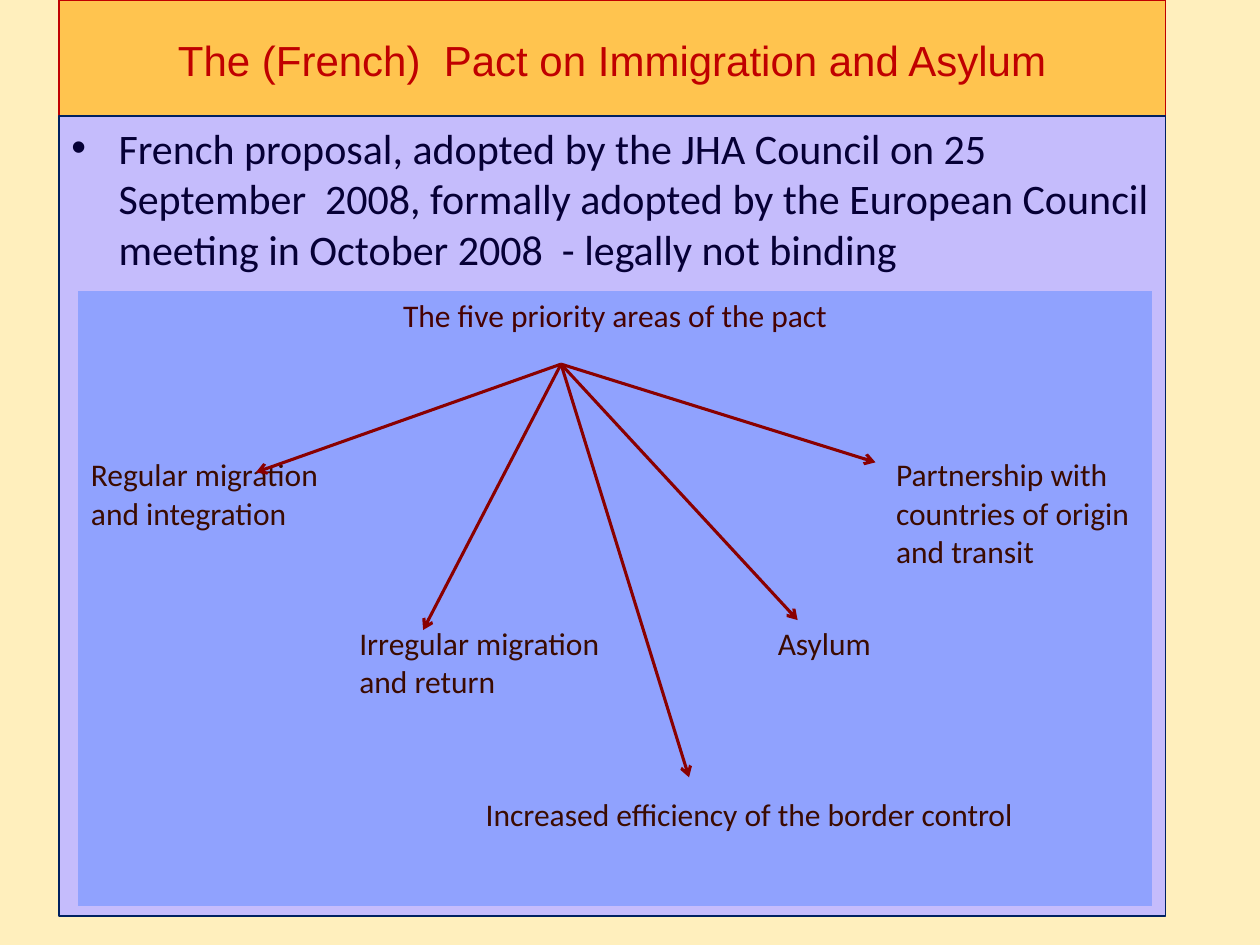
"""Build the slide on the Pact on Immigration and Asylum and its five priority areas."""

from dataclasses import dataclass

import pptx
import pptx.dml.color
import pptx.enum.shapes
import pptx.enum.text
import pptx.oxml
import pptx.oxml.ns
import pptx.util

Cm = pptx.util.Cm
Pt = pptx.util.Pt
Align = pptx.enum.text.PP_ALIGN
Anchor = pptx.enum.text.MSO_ANCHOR

COLOURS = {
    "background": "FFEFBD",
    "title_fill": "FFC44F",
    "title": "C00000",
    "body_fill": "C5BCFC",
    "body_line": "002060",
    "body": "060036",
    "table_fill": "90A2FE",
    "heading": "460202",
    "area": "3B0B01",
    "arrow": "8A0000",
}


@dataclass(frozen=True)
class Panel:
    text: str
    top: float
    height: float
    fill: str
    line: str
    colour: str
    font: str
    align: Align
    anchor: Anchor


@dataclass(frozen=True)
class Entry:
    text: str
    row: int
    column: int
    span: int = 1
    align: Align = Align.LEFT
    colour: str = "area"


PANEL_LEFT, PANEL_WIDTH = 1.19, 22.3
TITLE = Panel("The (French)  Pact on Immigration and Asylum", 0, 2.39,
              "title_fill", "title", "title", "Arial", Align.CENTER, Anchor.MIDDLE)
BODY = Panel("French proposal, adopted by the JHA Council on 25 September  2008, "
             "formally adopted by the European Council meeting in October 2008  "
             "- legally not binding", 2.34, 16.13,
             "body_fill", "body_line", "body", "Calibri", Align.LEFT, Anchor.TOP)

TABLE_LEFT, TABLE_TOP, COLUMN_WIDTH, COLUMN_COUNT = 1.58, 5.87, 5.41, 4
ROW_HEIGHTS = (1.07, 1.07, 1.07, 3.4, 3.45, 2.34)
ENTRIES = (
    Entry("The five priority areas of the pact", 0, 0, 4, Align.CENTER, "heading"),
    Entry("Regular migration and integration", 3, 0),
    Entry("Partnership with countries of origin and transit", 3, 3),
    Entry("Irregular migration and return", 4, 1),
    Entry("Asylum", 4, 2, align=Align.RIGHT),
    Entry("Increased efficiency of the border control", 5, 1, 3, Align.CENTER),
)

ARROW_START = (11.31, 7.34)
ARROW_ENDS = ((5.16, 9.52), (8.53, 12.7), (13.89, 15.67), (16.08, 12.5), (17.65, 9.32))


def rgb(name: str) -> pptx.dml.color.RGBColor:
    """Return the named colour."""
    return pptx.dml.color.RGBColor.from_string(COLOURS[name])


def set_fill(fill, name: str) -> None:
    """Apply a solid named colour to a fill."""
    fill.solid()
    fill.fore_color.rgb = rgb(name)


def style_paragraph(paragraph, font: str, size: float, colour: str, align: Align) -> None:
    """Align a paragraph and format its runs."""
    paragraph.alignment = align
    for run in paragraph.runs:
        run.font.name = font
        run.font.size = Pt(size)
        run.font.color.rgb = rgb(colour)


def add_panel(slide, panel: Panel):
    """Draw a bordered panel and return its paragraph."""
    shape = slide.shapes.add_shape(
        pptx.enum.shapes.MSO_SHAPE.RECTANGLE,
        Cm(PANEL_LEFT), Cm(panel.top), Cm(PANEL_WIDTH), Cm(panel.height))
    shape.shadow.inherit = False
    set_fill(shape.fill, panel.fill)
    shape.line.color.rgb = rgb(panel.line)
    shape.line.width = Pt(0.75)
    text_frame = shape.text_frame
    text_frame.text = panel.text
    text_frame.word_wrap = True
    text_frame.vertical_anchor = panel.anchor
    paragraph = text_frame.paragraphs[0]
    style_paragraph(paragraph, panel.font, 24, panel.colour, panel.align)
    return paragraph


def add_bullet(paragraph) -> None:
    """Give a paragraph a bullet with a hanging indent."""
    paragraph.space_before = Pt(4.8)
    properties = paragraph._p.get_or_add_pPr()
    properties.set("marL", str(Cm(0.95)))
    properties.set("indent", str(-Cm(0.95)))
    for tag, attribute, value in (("a:buFont", "typeface", "Arial"),
                                  ("a:buChar", "char", "•")):
        element = pptx.oxml.xmlchemy.OxmlElement(tag)
        element.set(attribute, value)
        properties.append(element)


def add_area_table(slide) -> None:
    """Draw the table that holds the priority areas."""
    table = slide.shapes.add_table(
        len(ROW_HEIGHTS), COLUMN_COUNT, Cm(TABLE_LEFT), Cm(TABLE_TOP),
        Cm(COLUMN_WIDTH * COLUMN_COUNT), Cm(sum(ROW_HEIGHTS))).table
    table.first_row = False
    table.horz_banding = False
    for row, height in zip(table.rows, ROW_HEIGHTS):
        row.height = Cm(height)
    for cell in table.iter_cells():
        set_fill(cell.fill, "table_fill")
        properties = cell._tc.get_or_add_tcPr()
        for index, side in enumerate(("a:lnL", "a:lnR", "a:lnT", "a:lnB")):
            border = pptx.oxml.xmlchemy.OxmlElement(side)
            border.append(pptx.oxml.xmlchemy.OxmlElement("a:noFill"))
            properties.insert(index, border)
    for entry in ENTRIES:
        cell = table.cell(entry.row, entry.column)
        if entry.span > 1:
            cell.merge(table.cell(entry.row, entry.column + entry.span - 1))
        cell.text_frame.text = entry.text
        style_paragraph(cell.text_frame.paragraphs[0], "Calibri", 18,
                        entry.colour, entry.align)


def add_arrow(slide, end: tuple[float, float]) -> None:
    """Draw an arrow from the shared start to an area."""
    connector = slide.shapes.add_connector(
        pptx.enum.shapes.MSO_CONNECTOR.STRAIGHT,
        *(Cm(length) for length in ARROW_START + end))
    connector.line.color.rgb = rgb("arrow")
    connector.line.width = Pt(1.75)
    properties = connector._element.spPr
    head = pptx.oxml.xmlchemy.OxmlElement("a:tailEnd")
    head.set("type", "arrow")
    properties.find(pptx.oxml.ns.qn("a:ln")).append(head)
    properties.append(pptx.oxml.xmlchemy.OxmlElement("a:effectLst"))


def main() -> None:
    """Assemble and save the presentation."""
    presentation = pptx.Presentation()
    presentation.slide_width, presentation.slide_height = Cm(25.4), Cm(19.05)
    slide = presentation.slides.add_slide(presentation.slide_layouts[6])
    set_fill(slide.background.fill, "background")
    add_panel(slide, TITLE)
    add_bullet(add_panel(slide, BODY))
    add_area_table(slide)
    for end in ARROW_ENDS:
        add_arrow(slide, end)
    presentation.save("out.pptx")


if __name__ == "__main__":
    main()
